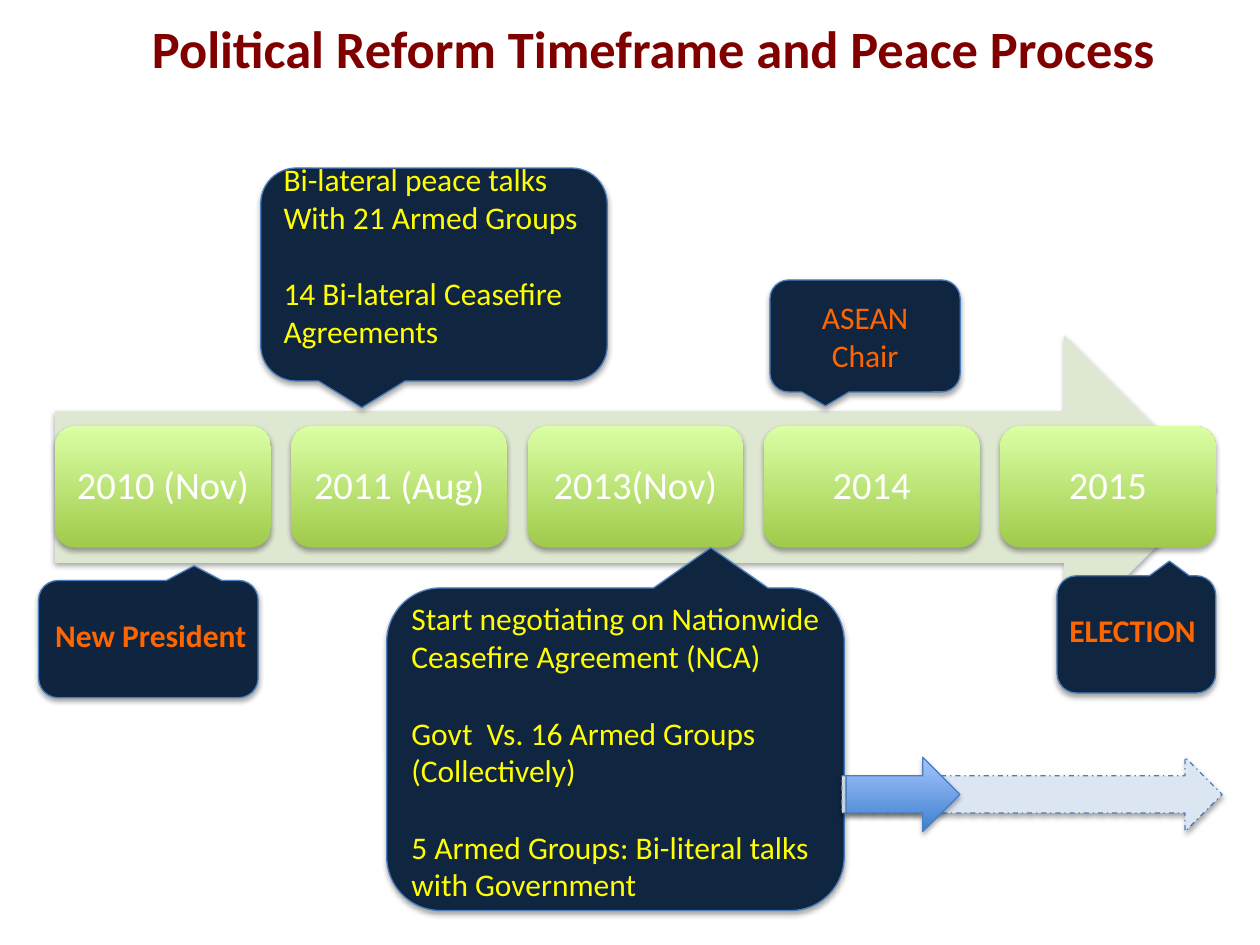
from lxml.etree import SubElement
from pptx import Presentation
from pptx.dml.color import RGBColor
from pptx.enum.dml import MSO_LINE
from pptx.enum.shapes import MSO_SHAPE as SHAPE
from pptx.enum.text import MSO_ANCHOR as ANCHOR, PP_ALIGN as ALIGN
from pptx.oxml.ns import qn
from pptx.util import Pt

MAROON = RGBColor(0x80, 0x00, 0x00)
WHITE = RGBColor(0xFF, 0xFF, 0xFF)
YELLOW = RGBColor(0xFF, 0xFF, 0x00)
ORANGE = RGBColor(0xFF, 0x66, 0x00)
NAVY = RGBColor(0x10, 0x25, 0x3F)
DARK_NAVY = RGBColor(0x0F, 0x24, 0x3E)
OUTLINE = RGBColor(0x4B, 0x7E, 0xBC)
SAGE = RGBColor(0xDE, 0xE7, 0xD1)
PALE_BLUE = RGBColor(0xDC, 0xE6, 0xF2)
GREENS = (RGBColor(0xA0, 0xCA, 0x4A), RGBColor(0xDA, 0xFF, 0xA5))
BLUES = (RGBColor(0x3F, 0x80, 0xCE), RGBColor(0xA4, 0xC4, 0xFF))

YEARS = ["2010 (Nov)", "2011 (Aug)", "2013(Nov)", "2014", "2015"]
PEACE_TALKS = ["Bi-lateral peace talks", "With 21 Armed Groups",
               "14 Bi-lateral Ceasefire Agreements"]
NEGOTIATION = ["Start negotiating on Nationwide Ceasefire Agreement (NCA)",
               "Govt  Vs. 16 Armed Groups (Collectively)",
               "5 Armed Groups: Bi-literal talks with Government"]
LINE_GAP = 22


def add_shadow(shape):
    shape.shadow.inherit = False
    effects = shape._element.spPr.find(qn("a:effectLst"))
    outer = SubElement(effects, qn("a:outerShdw"), blurRad=str(Pt(3.1)),
                       dist=str(Pt(1.8)), dir="5400000", rotWithShape="0")
    black = SubElement(outer, qn("a:srgbClr"), val="000000")
    SubElement(black, qn("a:alpha"), val="35000")


def add_block(slide, kind, box, fill, line=OUTLINE, dash=None, rotation=0):
    """Add a shadowed shape; a pair of colours gives a bottom-to-top gradient."""
    block = slide.shapes.add_shape(kind, *map(Pt, box))
    block.rotation = rotation
    if isinstance(fill, RGBColor):
        block.fill.solid()
        block.fill.fore_color.rgb = fill
    else:
        block.fill.gradient()
        block.fill.gradient_angle = 90
        for stop, color in zip(block.fill.gradient_stops, fill):
            stop.color.rgb = color
    if line is None:
        block.line.fill.background()
    else:
        block.line.color.rgb = line
        block.line.width = Pt(0.75)
        block.line.dash_style = dash
    add_shadow(block)
    return block


def write(shape, lines, color, size=18, bold=False, align=ALIGN.LEFT,
          anchor=ANCHOR.MIDDLE, wrap=True, spacing=None, gaps=()):
    """Fill a shape with paragraphs; gaps lists those set one line lower."""
    frame = shape.text_frame
    frame.word_wrap = wrap
    frame.vertical_anchor = anchor
    for index, text in enumerate(lines):
        paragraph = frame.add_paragraph() if index else frame.paragraphs[0]
        paragraph.alignment = align
        paragraph.line_spacing = spacing
        if index in gaps:
            paragraph.space_before = Pt(LINE_GAP)
        run = paragraph.add_run()
        run.text = text
        run.font.name = "Calibri"
        run.font.size = Pt(size)
        run.font.bold = bold
        run.font.color.rgb = color
    return frame


def add_label(slide, box, lines, color, **text_format):
    label = slide.shapes.add_textbox(*map(Pt, box))
    write(label, lines, color, anchor=ANCHOR.TOP, **text_format)


def place_title(slide, left, top, width, height):
    title = slide.shapes.title
    title.left, title.top = Pt(left), Pt(top)
    title.width, title.height = Pt(width), Pt(height)
    write(title, ["Political Reform Timeframe and Peace Process"], MAROON,
          size=30, bold=True, align=ALIGN.CENTER, wrap=False)


def draw_timeline(slide, left, top, width, height):
    add_block(slide, SHAPE.RIGHT_ARROW, (left, top, width, height), SAGE, line=None)
    card_width, card_height = 123.3, height * 0.4
    pitch = (width - card_width) / (len(YEARS) - 1)
    for index, year in enumerate(YEARS):
        card = add_block(slide, SHAPE.ROUNDED_RECTANGLE,
                         (left + index * pitch, top + height * 0.3,
                          card_width, card_height), GREENS, line=None)
        frame = write(card, [year], WHITE, size=22, align=ALIGN.CENTER, spacing=0.9)
        frame.margin_left = frame.margin_right = Pt(6.5)


def draw_callouts_above(slide, left, top):
    talks = add_block(slide, SHAPE.ROUNDED_RECTANGULAR_CALLOUT,
                      (left, top, 198, 121.7), NAVY)
    frame = write(talks, PEACE_TALKS, YELLOW, gaps=[2])
    frame.margin_bottom = Pt(3.6 + LINE_GAP)
    chair = add_block(slide, SHAPE.ROUNDED_RECTANGULAR_CALLOUT,
                      (left + 291, top + 64, 108.7, 64), NAVY)
    write(chair, ["ASEAN Chair"], ORANGE, align=ALIGN.CENTER)


def draw_callout_below(slide, box, fill, label_offset, label_size, lines, color,
                       **text_format):
    """Turn a callout so it points up, with an upright label over it."""
    add_block(slide, SHAPE.ROUNDED_RECTANGULAR_CALLOUT, box, fill, rotation=180)
    left, top = box[0] + label_offset[0], box[1] + label_offset[1]
    add_label(slide, (left, top, *label_size), lines, color, **text_format)


def draw_progress(slide, left, top, height):
    add_block(slide, SHAPE.RIGHT_ARROW, (left, top, 217.4, height), PALE_BLUE,
              dash=MSO_LINE.DASH_DOT)
    add_block(slide, SHAPE.RIGHT_ARROW, (left + 2.5, top, 65, height), BLUES)


def main():
    deck = Presentation()
    deck.slide_width, deck.slide_height = Pt(720), Pt(540)
    slide = deck.slides.add_slide(deck.slide_layouts[5])
    place_title(slide, 75, 5, 597, 44)
    draw_timeline(slide, 31.5, 191.5, 663.3, 173.5)
    draw_callouts_above(slide, 149, 96)
    draw_callout_below(slide, (221, 336, 261.4, 184.3), NAVY, (7, 3), (252, 181.5),
                       NEGOTIATION, YELLOW, gaps=[1, 2])
    draw_callout_below(slide, (604, 329, 90.7, 67), NAVY, (0, 16.5), (88, 29),
                       ["ELECTION"], ORANGE, bold=True, wrap=False)
    draw_callout_below(slide, (22, 331.7, 125.5, 67), DARK_NAVY, (2.5, 16.5), (125, 29),
                       ["New President"], ORANGE, bold=True, wrap=False)
    draw_progress(slide, 481, 432.7, 42.5)
    deck.save("out.pptx")


if __name__ == "__main__":
    main()
